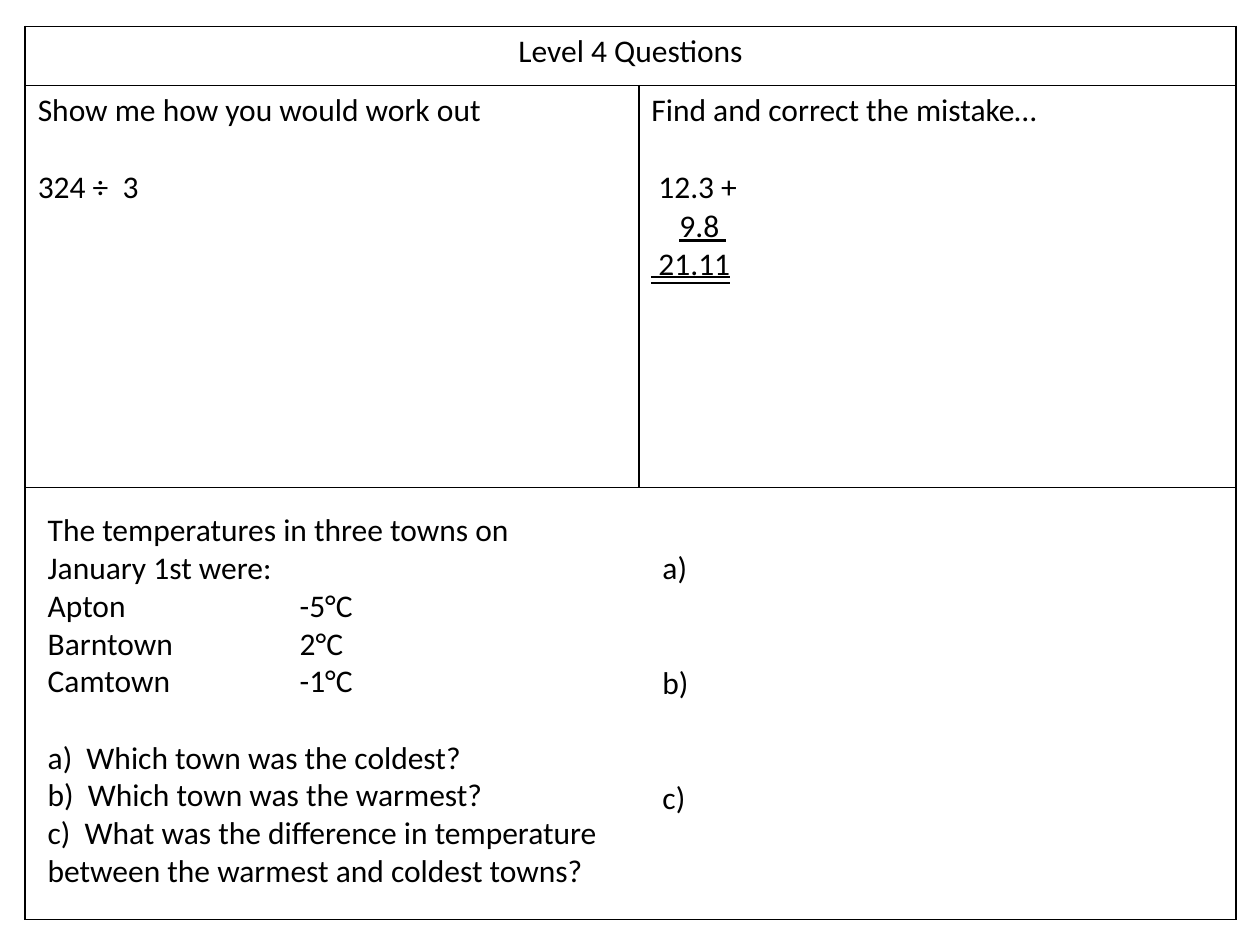
from lxml import etree
from pptx import Presentation
from pptx import util as u
from pptx.dml.color import RGBColor
from pptx.enum import text
from pptx.oxml.ns import qn

THEME = dict(font="Calibri", size=18, ink="000000", border=1)
LINE = 22  # height of one text line, points
SPACE = 4  # width of one space, points

# Content: each paragraph is a dict of text plus optional layout
TITLE = [dict(t="Level 4 Questions", align=text.PP_ALIGN.CENTER)]
DIVISION = [
    dict(t="Show me how you would work out"),
    dict(t="324 ÷  3", gap=1),
]
MISTAKE = [
    dict(t="Find and correct the mistake…"),
    dict(t="12.3 +", gap=1, indent=1),
    dict(t="9.8 ", indent=4, line=text.MSO_UNDERLINE.SINGLE_LINE),
    dict(t=" 21.11", line=text.MSO_UNDERLINE.DOUBLE_LINE),
]
TOWNS = [("Apton", "-5°C"), ("Barntown", "2°C"), ("Camtown", "-1°C")]
QUESTIONS = [
    "a)  Which town was the coldest?",
    "b)  Which town was the warmest?",
    "c)  What was the difference in temperature between the warmest and coldest towns?",
]
TEMPERATURES = (
    [dict(t="The temperatures in three towns on January 1st were:")]
    + [dict(t=f"{town}\t{temp}", tab=2) for town, temp in TOWNS]
    + [dict(t=q, gap=0 if i else 1) for i, q in enumerate(QUESTIONS)]
)
ANSWERS = [dict(t=t, gap=2 if i else 0) for i, t in enumerate(["a)", "b)", "c)"])]

# Geometry, inches
COLS, ROWS = [4.87, 4.74], [0.47, 3.19, 3.43]
CELLS = {(0, 0): TITLE, (1, 0): DIVISION, (1, 1): MISTAKE}
BOXES = [(5.16, 4.3, 4.33, 2.22, ANSWERS), (0.28, 4, 4.65, 3.13, TEMPERATURES)]


def write(tf, paragraphs):
    for i, item in enumerate(paragraphs):
        p = tf.add_paragraph() if i else tf.paragraphs[0]
        p.alignment = item.get("align", text.PP_ALIGN.LEFT)
        p.space_before = u.Pt(LINE * item.get("gap", 0))
        pPr = p._p.get_or_add_pPr()
        if "indent" in item:
            pPr.set("marL", str(u.Pt(SPACE * item["indent"])))
        if "tab" in item:
            tabs = etree.SubElement(pPr, qn("a:tabLst"))
            etree.SubElement(tabs, qn("a:tab"), pos=str(u.Inches(item["tab"])), algn="l")
        r = p.add_run()
        r.text = item["t"]
        r.font.name, r.font.size = THEME["font"], u.Pt(THEME["size"])
        r.font.color.rgb = RGBColor.from_string(THEME["ink"])
        if "line" in item:
            r.font.underline = item["line"]


def outline(cell):
    tcPr = cell._tc.get_or_add_tcPr()
    for side in ("lnL", "lnR", "lnT", "lnB"):
        ln = etree.SubElement(tcPr, qn(f"a:{side}"), w=str(u.Pt(THEME["border"])))
        fill = etree.SubElement(ln, qn("a:solidFill"))
        etree.SubElement(fill, qn("a:srgbClr"), val=THEME["ink"])
    cell.fill.background()


prs = Presentation()
prs.slide_width, prs.slide_height = u.Inches(10), u.Inches(7.5)
s = prs.slides.add_slide(prs.slide_layouts[6])

# Question grid
tbl = s.shapes.add_table(len(ROWS), len(COLS), u.Inches(0.2), u.Inches(0.21),
                         u.Inches(sum(COLS)), u.Inches(sum(ROWS))).table
tbl.first_row = tbl.horz_banding = False
for col, width in zip(tbl.columns, COLS):
    col.width = u.Inches(width)
for row, height in zip(tbl.rows, ROWS):
    row.height = u.Inches(height)
for cell in tbl.iter_cells():
    outline(cell)
for row in (0, 2):
    tbl.cell(row, 0).merge(tbl.cell(row, 1))
for (row, col), paragraphs in CELLS.items():
    write(tbl.cell(row, col).text_frame, paragraphs)

# Temperature question and answer labels
for x, y, w, h, paragraphs in BOXES:
    tf = s.shapes.add_textbox(*map(u.Inches, (x, y, w, h))).text_frame
    tf.word_wrap = True
    tf.auto_size = text.MSO_AUTO_SIZE.SHAPE_TO_FIT_TEXT
    write(tf, paragraphs)

prs.save("out.pptx")
